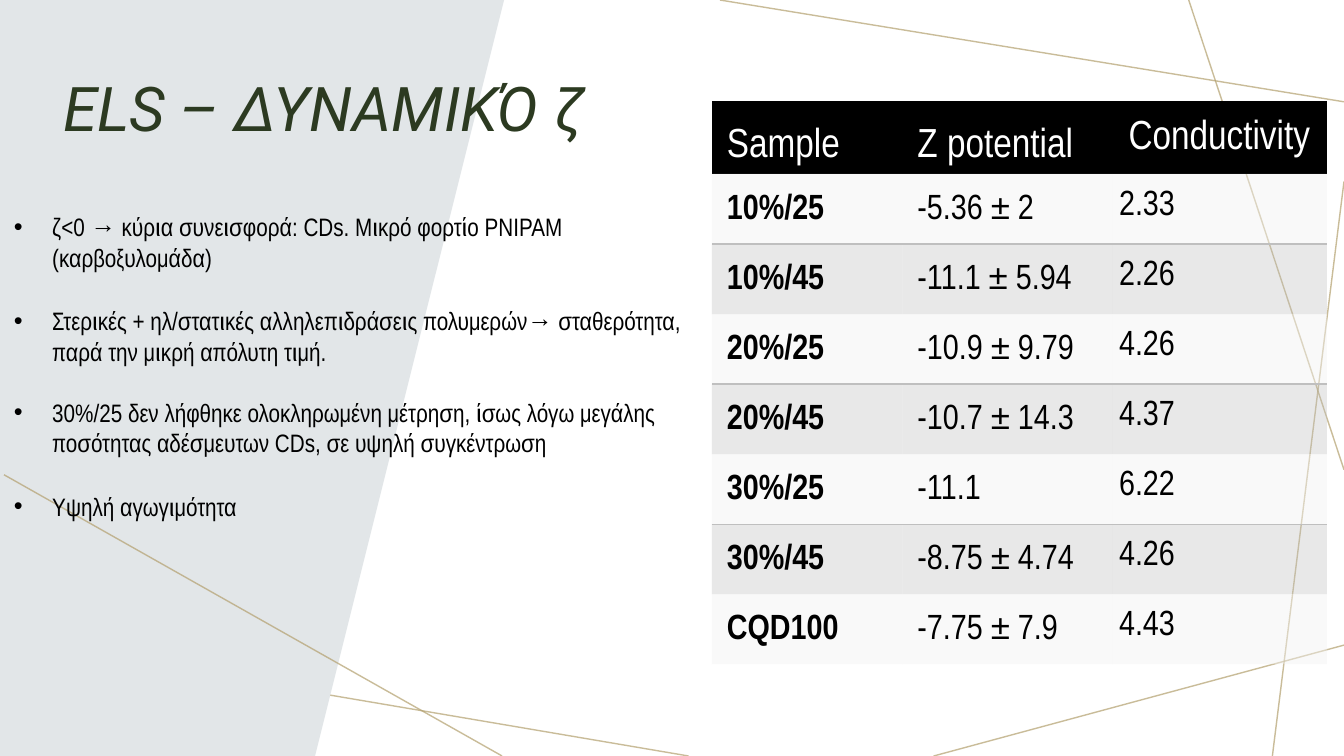
"""Builds a slide on zeta potential: a title, bullet notes and a table of measurements."""
import pptx
import pptx.dml.color
import pptx.enum.shapes
import pptx.enum.text
import pptx.oxml
import pptx.oxml.ns
import pptx.util
from pptx.util import Inches, Pt

TITLE = "ELS – ΔΥΝΑΜΙΚΌ ζ"
NOTES = [
    ("ζ<0 → κύρια συνεισφορά: CDs. Μικρό φορτίο PNIPAM (καρβοξυλομάδα)", 0),
    ("Στερικές + ηλ/στατικές αλληλεπιδράσεις πολυμερών→ σταθερότητα, παρά την μικρή απόλυτη τιμή.", 24),
    ("30%/25 δεν λήφθηκε ολοκληρωμένη μέτρηση, ίσως λόγω μεγάλης ποσότητας αδέσμευτων CDs, "
     "σε υψηλή συγκέντρωση", 22),
    ("Υψηλή αγωγιμότητα", 24),
]
MEASUREMENTS = [
    ("Sample", "Z potential", "Conductivity"),
    ("10%/25", "-5.36 ± 2", "2.33"),
    ("10%/45", "-11.1 ± 5.94", "2.26"),
    ("20%/25", "-10.9 ± 9.79", "4.26"),
    ("20%/45", "-10.7 ± 14.3", "4.37"),
    ("30%/25", "-11.1", "6.22"),
    ("30%/45", "-8.75 ± 4.74", "4.26"),
    ("CQD100", "-7.75 ± 7.9", "4.43"),
]
COLUMN_WIDTHS = (1.89, 2.08, 2.13)
HEADER_HEIGHT, ROW_HEIGHT = 0.58, 0.695
BACK_LINES = [
    (6.83, 7.5, 0, 6.34),
    (13.33, 6.4, 9.26, 7.5),
    (13.33, 1.8, 12.62, 7.5),
    (13.33, 4.66, 11.79, 0),
    (13.33, 1.01, 7.14, 0),
]
FRONT_LINE = (0.04, 4.71, 4.98, 7.5)
PANEL = [(3.13, 7.5), (0, 7.5), (0, 0), (5.3, 0)]

GOLD = pptx.dml.color.RGBColor(0xB3, 0xA0, 0x6E)
PANEL_GREY = pptx.dml.color.RGBColor(0xE2, 0xE6, 0xE8)
TITLE_GREEN = pptx.dml.color.RGBColor(0x2C, 0x3A, 0x21)
BLACK = pptx.dml.color.RGBColor(0, 0, 0)
WHITE = pptx.dml.color.RGBColor(0xFF, 0xFF, 0xFF)
PALE = pptx.dml.color.RGBColor(0xF2, 0xF2, 0xF2)
BAND = pptx.dml.color.RGBColor(0xBF, 0xBF, 0xBF)
BODY_FONT, TITLE_FONT = "Arial Narrow", "Roboto"


def add_element(parent, tag, **attributes):
    element = pptx.oxml.parse_xml(f'<a:{tag} {pptx.oxml.ns.nsdecls("a")}/>')
    for name, value in attributes.items():
        element.set(name, str(value))
    parent.append(element)
    return element


def set_opacity(element, percent):
    for color in element.iter(pptx.oxml.ns.qn("a:srgbClr")):
        add_element(color, "alpha", val=percent * 1000)


def set_font(font, name, size, color, bold=False, italic=False):
    font.name, font.size, font.bold, font.italic = name, Pt(size), bold, italic
    font.color.rgb = color


def add_line(page, ends):
    line = page.shapes.add_connector(pptx.enum.shapes.MSO_CONNECTOR.STRAIGHT, *map(Inches, ends))
    line.line.color.rgb = GOLD
    line.line.width = Pt(1)
    properties = line._element.spPr
    set_opacity(properties, 70)
    add_element(properties, "effectLst")


def add_panel(page):
    builder = page.shapes.build_freeform(*PANEL[0], scale=Inches(1))
    builder.add_line_segments(PANEL[1:], close=True)
    panel = builder.convert_to_shape()
    panel.shadow.inherit = False
    panel.fill.solid()
    panel.fill.fore_color.rgb = PANEL_GREY
    panel.line.fill.background()


def add_text_box(page, left, top, width, height):
    frame = page.shapes.add_textbox(*map(Inches, (left, top, width, height))).text_frame
    frame.word_wrap = True
    return frame


def add_title(page):
    para = add_text_box(page, 0.53, 0.73, 5.7, 3.9).paragraphs[0]
    para.text = TITLE
    para.line_spacing = 0.9
    set_font(para.runs[0].font, TITLE_FONT, 44, TITLE_GREEN, italic=True)


def add_notes(page):
    frame = add_text_box(page, 0.04, 2.05, 7.24, 2.89)
    for index, (note, gap) in enumerate(NOTES):
        para = frame.add_paragraph() if index else frame.paragraphs[0]
        para.text = note
        para.space_before = Pt(gap)
        properties = para._p.get_or_add_pPr()
        properties.set("marL", str(Inches(0.38)))
        properties.set("indent", str(-Inches(0.38)))
        add_element(properties, "buFont", typeface="Arial")
        add_element(properties, "buChar", char="•")
        set_font(para.runs[0].font, BODY_FONT, 18, BLACK)


def set_borders(cell, ruled_side):
    properties = cell._tc.get_or_add_tcPr()
    for side in ("lnL", "lnR", "lnT", "lnB"):
        border = add_element(properties, side, w=Pt(1))
        if side == ruled_side:
            add_element(add_element(border, "solidFill"), "srgbClr", val=BAND)
        else:
            add_element(border, "noFill")


def format_cell(cell, row, column):
    header, measured = row == 0, column == 2
    if header:
        color, opacity, ruled_side = BLACK, 100, None
    elif row % 2:
        color, opacity, ruled_side = PALE, 45, "lnB" if row < len(MEASUREMENTS) - 1 else None
    else:
        color, opacity, ruled_side = BAND, 35, "lnT"
    cell.fill.solid()
    cell.fill.fore_color.rgb = color
    if opacity < 100:
        set_opacity(cell._tc.tcPr, opacity)
    fill = cell._tc.tcPr[0]
    set_borders(cell, ruled_side)
    cell._tc.tcPr.append(fill)
    cell.margin_left = cell.margin_right = Inches(0.07 if measured else 0.15)
    cell.margin_top = Inches(0 if measured else 0.2)
    cell.margin_bottom = 0
    para = cell.text_frame.paragraphs[0]
    if measured:
        para.line_spacing = 1.5
    if header and measured:
        para.alignment = pptx.enum.text.PP_ALIGN.CENTER
    elif header:
        cell.vertical_anchor = pptx.enum.text.MSO_ANCHOR.MIDDLE
    set_font(para.runs[0].font, BODY_FONT, 29 if header else 25, WHITE if header else BLACK,
             bold=column == 0 and not header)


def add_measurements(page):
    heights = [HEADER_HEIGHT] + [ROW_HEIGHT] * (len(MEASUREMENTS) - 1)
    table = page.shapes.add_table(
        len(MEASUREMENTS), len(COLUMN_WIDTHS), Inches(7.06), Inches(1),
        Inches(sum(COLUMN_WIDTHS)), Inches(sum(heights))).table
    table.horz_banding = False
    for column, width in zip(table.columns, COLUMN_WIDTHS):
        column.width = Inches(width)
    for row, (height, values) in enumerate(zip(heights, MEASUREMENTS)):
        table.rows[row].height = Inches(height)
        for column, value in enumerate(values):
            cell = table.cell(row, column)
            cell.text_frame.text = value
            format_cell(cell, row, column)


def main():
    deck = pptx.Presentation()
    deck.slide_width, deck.slide_height = Inches(13.33), Inches(7.5)
    page = deck.slides.add_slide(deck.slide_layouts[6])
    for ends in BACK_LINES:
        add_line(page, ends)
    add_panel(page)
    add_title(page)
    add_line(page, FRONT_LINE)
    add_measurements(page)
    add_notes(page)
    deck.save("out.pptx")


if __name__ == "__main__":
    main()
